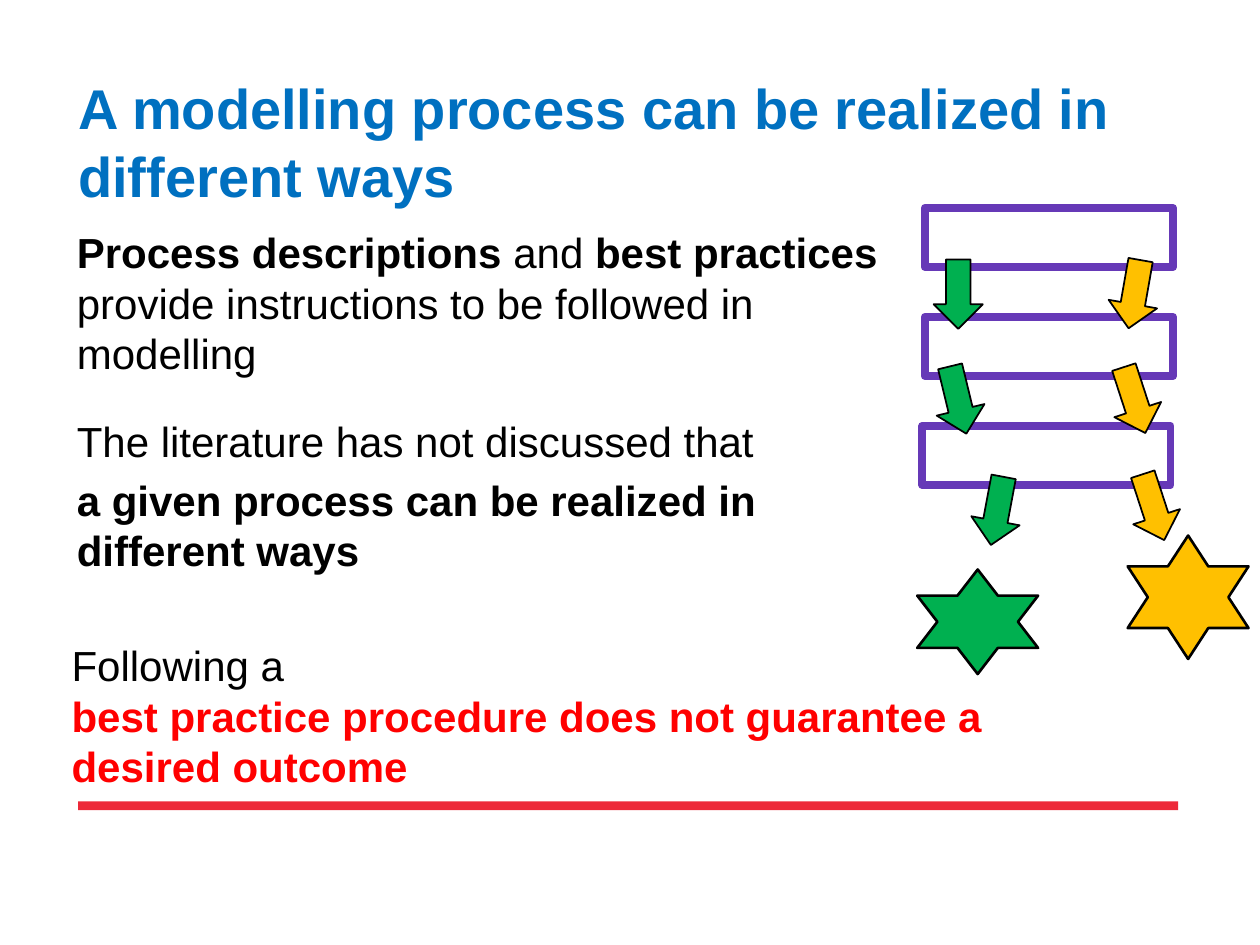
from dataclasses import dataclass
from pptx import Presentation
from pptx.dml.color import RGBColor
from pptx.enum.shapes import MSO_SHAPE
from pptx.enum.text import MSO_ANCHOR, MSO_AUTO_SIZE, PP_ALIGN
from pptx.oxml.ns import qn
from pptx.util import Inches, Pt


@dataclass(frozen=True)
class Theme:
    font: str = "Arial"
    head: int = 32
    text: int = 24
    blue: str = "0070C0"
    black: str = "000000"
    red: str = "FF0000"
    rule: str = "ED2939"
    violet: str = "6639B7"
    green: str = "00B050"
    amber: str = "FFC000"


T = Theme()
CELL = 0.1  # the slide is a grid of 100 columns by 75 rows


def span(n):
    return Inches(n * CELL)


def place(item, col, row, wide, high):
    item.left, item.top = span(col), span(row)
    item.width, item.height = span(wide), span(high)


def add_run(para, text, size, color, bold=False):
    run = para.add_run()
    run.text = text
    font = run.font
    font.name, font.size, font.bold = T.font, Pt(size), bold
    font.color.rgb = RGBColor.from_string(color)


def set_frame(frame, anchor, inset=True):
    frame.word_wrap = True
    frame.auto_size = MSO_AUTO_SIZE.NONE
    frame.vertical_anchor = anchor
    if not inset:
        frame.margin_left = frame.margin_right = 0
        frame.margin_top = frame.margin_bottom = 0


def add_paras(frame, paras):
    """Each paragraph is (space before, [(text, color, bold), ...])."""
    for i, (gap, runs) in enumerate(paras):
        para = frame.add_paragraph() if i else frame.paragraphs[0]
        props = para._p.get_or_add_pPr()
        props.set("marL", "0")
        props.set("indent", "0")
        props.append(props.makeelement(qn("a:buNone"), {}))
        para.alignment = PP_ALIGN.LEFT
        para.space_before = Pt(gap)
        for text, color, bold in runs:
            add_run(para, text, T.text, color, bold)


def add_form(slide, kind, box, fill=None, line=None, weight=1, turn=0):
    form = slide.shapes.add_shape(kind, *map(span, box))
    form.shadow.inherit = False
    form.rotation = turn
    if fill:
        form.fill.solid()
        form.fill.fore_color.rgb = RGBColor.from_string(fill)
    else:
        form.fill.background()
    if line:
        form.line.color.rgb = RGBColor.from_string(line)
        form.line.width = Pt(weight)
    else:
        form.line.fill.background()


def add_title(slide):
    title = slide.shapes.title
    place(title, 6.2, 5.3, 87.3, 11.8)
    set_frame(title.text_frame, MSO_ANCHOR.MIDDLE, inset=False)
    para = title.text_frame.paragraphs[0]
    para.alignment = PP_ALIGN.LEFT
    add_run(para, "A modelling process can be realized in different ways",
            T.head, T.blue, True)


def add_body(slide):
    body = slide.placeholders[1]
    place(body, 6.1, 18, 67.3, 40.2)
    set_frame(body.text_frame, MSO_ANCHOR.TOP, inset=False)
    add_paras(body.text_frame, [
        (0, [("Process descriptions ", T.black, True),
             ("and", T.black, False),
             (" best practices ", T.black, True),
             ("provide instructions to be followed in modelling",
              T.black, False)]),
        (21.5, [("The literature has not discussed that", T.black, False)]),
        (4.8, [("a given process can be realized in different ways",
                T.black, True)]),
    ])


def add_claim(slide):
    claim = slide.shapes.add_textbox(*map(span, (4.7, 50.3, 75.4, 13.1)))
    set_frame(claim.text_frame, MSO_ANCHOR.TOP)
    add_paras(claim.text_frame, [
        (0, [("Following a", T.black, False)]),
        (0, [("best practice procedure does not guarantee a desired outcome",
              T.red, True)]),
    ])


def add_route(slide, color, star, steps):
    """One way through the process: three arrows that end in a star."""
    add_form(slide, MSO_SHAPE.STAR_6_POINT, star, color, T.black, 1.5)
    for col, row, turn in steps:
        add_form(slide, MSO_SHAPE.DOWN_ARROW, (col, row, 3.9, 5.5),
                 color, T.black, 1, turn)


def main():
    deck = Presentation()
    deck.slide_width, deck.slide_height = span(100), span(75)
    slide = deck.slides.add_slide(deck.slide_layouts[1])

    # Text and the rule below it
    add_form(slide, MSO_SHAPE.RECTANGLE, (6.2, 63.6, 87.3, 0.7), T.rule)
    add_title(slide)
    add_body(slide)

    # Process stages
    for i, col in enumerate((73.4, 73.4, 73.2)):
        add_form(slide, MSO_SHAPE.RECTANGLE,
                 (col, 16.5 + 8.65 * i, 19.7, 4.7), None, T.violet, 4.5)

    # Two ways through the stages
    add_route(slide, T.amber, (89.5, 42.5, 9.6, 9.8),
              [(88.1, 20.6, 10), (88.1, 29, 342), (89.6, 37.5, 342)])
    add_claim(slide)
    add_route(slide, T.green, (72.8, 45.2, 9.6, 8.3),
              [(74.1, 20.6, 0), (74.1, 29, 346.4), (77.2, 37.8, 10.6)])

    deck.save("out.pptx")


if __name__ == "__main__":
    main()
